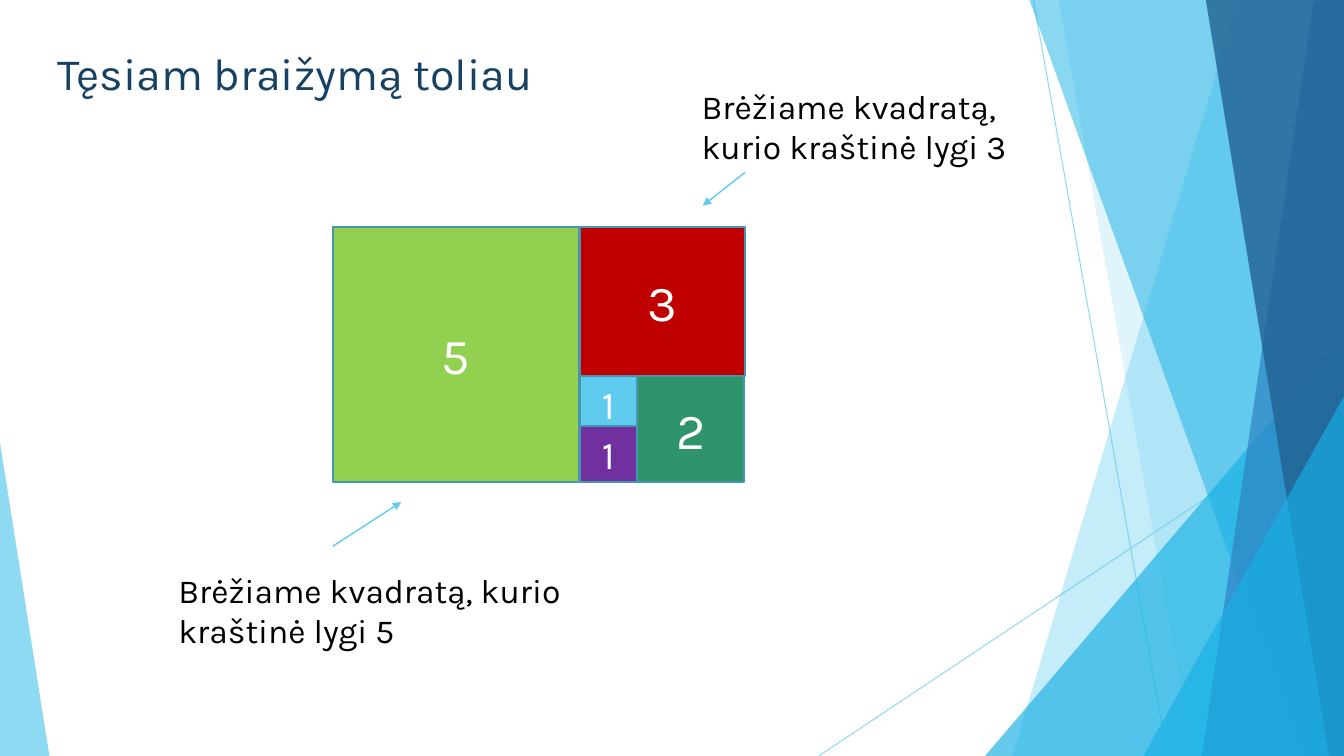
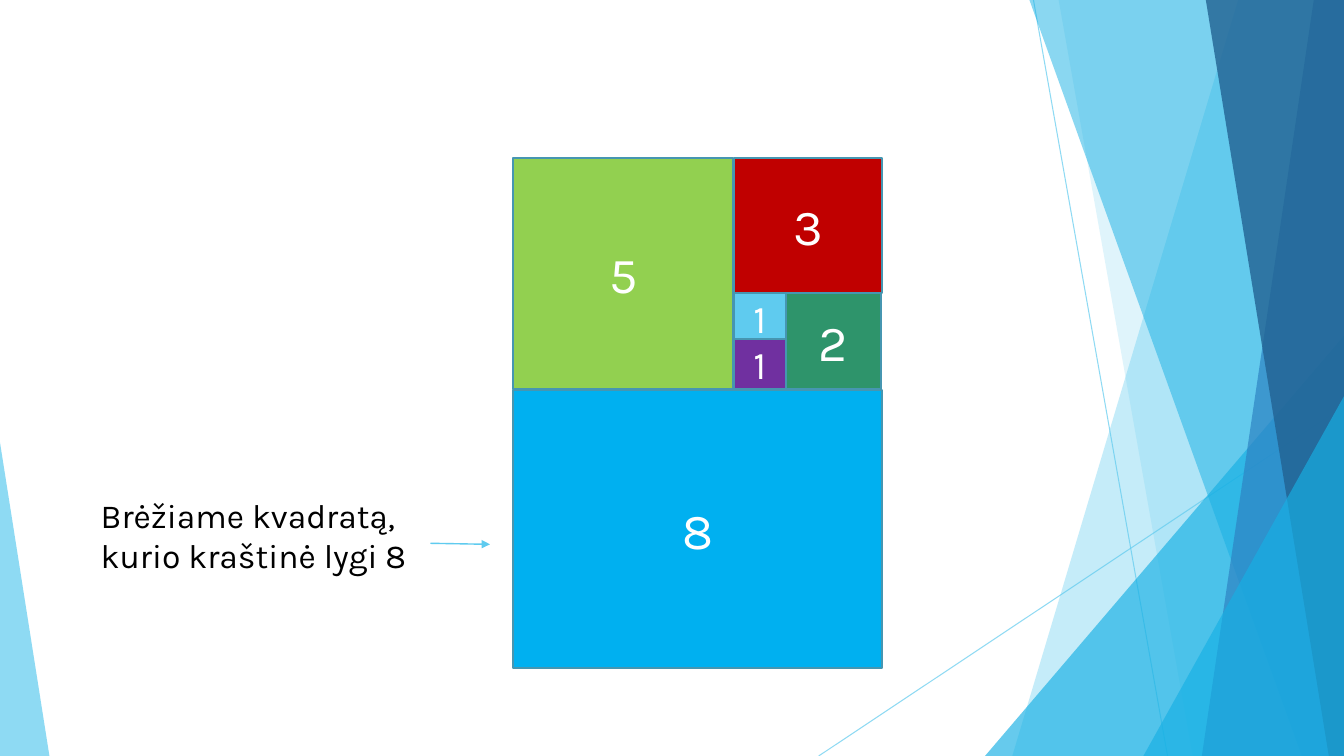
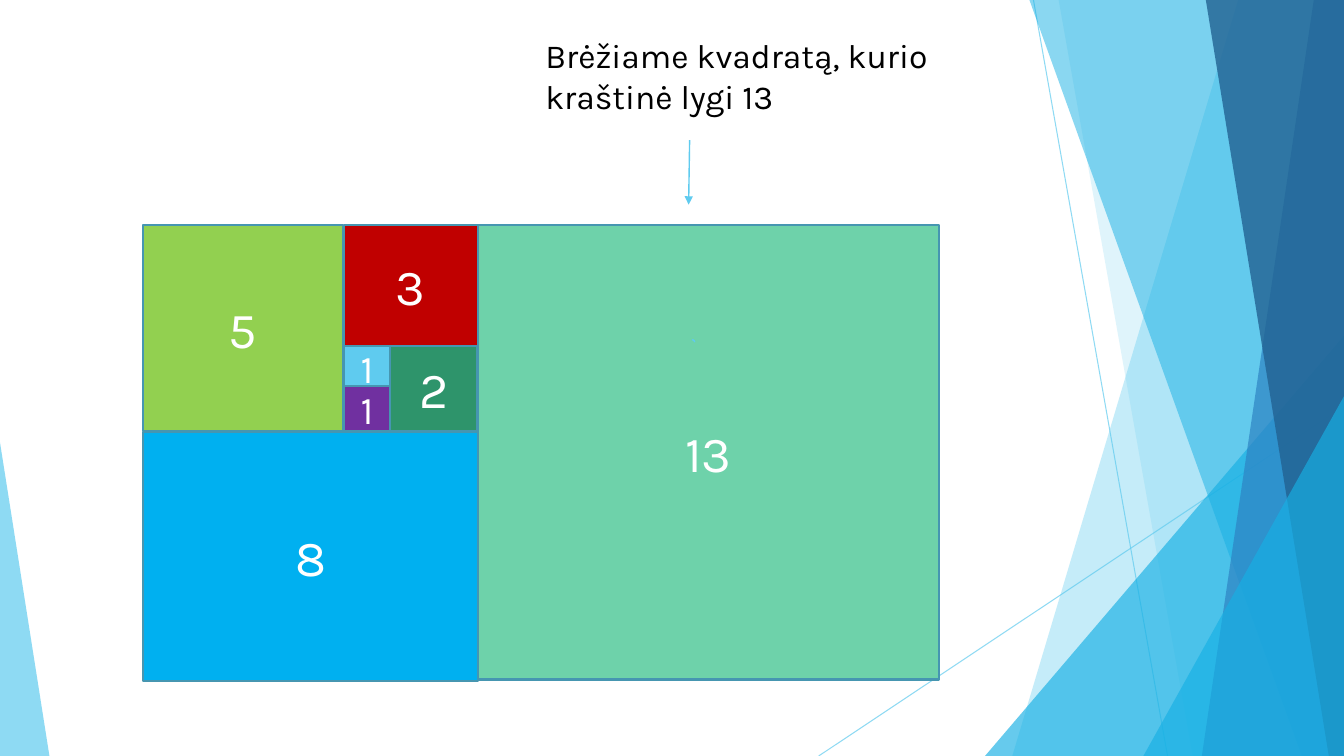
from pptx import Presentation
from pptx.dml.color import RGBColor
from pptx.enum.shapes import MSO_CONNECTOR, MSO_SHAPE as SHAPE
from pptx.enum.text import MSO_ANCHOR as ANCHOR, MSO_AUTO_SIZE as AUTOSIZE, PP_ALIGN as ALIGN
from pptx.oxml.ns import qn
from pptx.util import Pt
from lxml import etree

PX = 9144  # EMU in one px, 100 px to the inch
W, H = 1333, 750
SKY, CYAN, BLUE, NAVY, EDGE = "5FCBEF", "17B0E4", "2E83C3", "226292", "4696B1"
TITLE_ONLY, BLANK = 5, 6

# Text styles
TITLE = dict(size=32, color="174162")
NOTE = dict(size=24, color="000000")
SMALL = dict(size=28, color="FFFFFF")
LARGE = dict(size=36, color="FFFFFF")

# Shared backdrop, back to front
# line: x1, y1, x2, y2; band: top x, bottom x; triangle: x, y, w, h, apex
BACKDROP = [
    ("line", (1025, 0, 1158, H), SKY, 70),
    ("line", (W, 403, 812, H), SKY, 70),
    ("band", (1228, 1004), SKY, 36),
    ("band", (1050, 1183), SKY, 20),
    ("triangle", (977, 333, 356, 417, 1), CYAN, 66),
    ("band", (1021, 1291), CYAN, 50),
    ("band", (1303, 1192), BLUE, 70),
    ("band", (1196, 1318), NAVY, 80),
    ("triangle", (1134, 393, 199, 357, 1), CYAN, 66),
    ("triangle", (0, 439, 49, 311, 0), SKY, 70),
]

# Spiral squares at full scale: number, (x, y, w, h), fill, text style
SQUARES = [
    (1, (245, 148, 57, 55), SKY, SMALL),
    (1, (245, 198, 57, 55), "7030A0", SMALL),
    (2, (302, 148, 106, 105), "2E946B", LARGE),
    (3, (245, 0, 164, 148), "C00000", LARGE),
    (5, (0, 0, 244, 253), "92D050", LARGE),
    (8, (0, 254, 409, 305), "00B0F0", LARGE),
    (13, (409, 0, 563, 557), "6ED2AA", LARGE),
]

NOTE_TEXT = "Brėžiame kvadratą, kurio kraštinė lygi {}"

# notes: number, (x, y, w, h), arrow from and to
SLIDES = [
    dict(title="Tęsiam braižymą toliau", count=5, origin=(330, 225), scale=(1, 1),
         notes=[(3, (686, 80, 337, 91), (739, 171, 697, 204)),
                (5, (167, 560, 411, 91), (330, 542, 398, 498))]),
    dict(count=6, origin=(509, 157), scale=(0.895, 0.905),
         notes=[(8, (90, 486, 337, 91), (427, 539, 486, 540))]),
    dict(count=7, origin=(142, 223), scale=(0.812, 0.81), dot=(684, 337, 5, 5),
         notes=[(13, (531, 30, 400, 91), (684, 139, 683, 203))]),
]


def px(*values):
    return [round(v * PX) for v in values]


def rgb(color):
    return RGBColor.from_string(color)


def fade(sp, percent):
    for c in sp.element.iter(qn("a:srgbClr")):
        etree.SubElement(c, qn("a:alpha"), val=str(percent * 1000))


def write(tf, text, style, align=ALIGN.LEFT):
    p = tf.paragraphs[0]
    p.alignment = align
    r = p.add_run()
    r.text = text
    r.font.color.rgb = rgb(style["color"])
    for name, value in dict(name="Karla", size=Pt(style["size"])).items():
        setattr(r.font, name, value)


def paint(sp, fill=None, line=None, width=1.5):
    sp.shadow.inherit = False
    if fill:
        sp.fill.solid()
        sp.fill.fore_color.rgb = rgb(fill)
    else:
        sp.fill.background()
    if line:
        sp.line.color.rgb = rgb(line)
        sp.line.width = Pt(width)
    else:
        sp.line.fill.background()
    return sp


def add_line(s, ends, color, width, arrow=False):
    sp = s.shapes.add_connector(MSO_CONNECTOR.STRAIGHT, *px(*ends))
    sp.line.color.rgb = rgb(color)
    sp.line.width = Pt(width)
    props = sp.element.spPr
    if arrow:
        etree.SubElement(props.find(qn("a:ln")), qn("a:tailEnd"), type="triangle")
    etree.SubElement(props, qn("a:effectLst"))
    return sp


def add_band(s, top, bottom, color):
    outline = s.shapes.build_freeform(top, 0, scale=PX)
    outline.add_line_segments([(W, 0), (W, H), (bottom, H)], close=True)
    return paint(outline.convert_to_shape(), color)


def add_triangle(s, x, y, w, h, apex, color):
    sp = s.shapes.add_shape(SHAPE.ISOSCELES_TRIANGLE, *px(x, y, w, h))
    sp.adjustments[0] = apex
    return paint(sp, color)


def add_backdrop(s, master):
    """Draw the backdrop on a slide, then move it behind everything on the master."""
    tree = master.shapes.element
    for i, (kind, place, color, opacity) in enumerate(BACKDROP):
        if kind == "line":
            sp = add_line(s, place, color, 0.75)
        elif kind == "band":
            sp = add_band(s, *place, color)
        else:
            sp = add_triangle(s, *place, color)
        fade(sp, opacity)
        tree.insert(2 + i, sp.element)


def add_title(s, text):
    sp = s.shapes.title
    sp.left, sp.top, sp.width, sp.height = px(47, 40, 531, 85)
    tf = sp.text_frame
    for name, value in dict(vertical_anchor=ANCHOR.TOP, auto_size=AUTOSIZE.NONE,
                            word_wrap=True).items():
        setattr(tf, name, value)
    write(tf, text, TITLE)


def add_squares(s, count, origin, scale):
    (x0, y0), (sx, sy) = origin, scale
    for number, (x, y, w, h), fill, style in SQUARES[:count]:
        place = px(x0 + x * sx, y0 + y * sy, w * sx, h * sy)
        sp = paint(s.shapes.add_shape(SHAPE.RECTANGLE, *place), fill, EDGE)
        sp.text_frame.vertical_anchor = ANCHOR.MIDDLE
        write(sp.text_frame, str(number), style, ALIGN.CENTER)


def add_note(s, number, place, arrow):
    tf = s.shapes.add_textbox(*px(*place)).text_frame
    tf.word_wrap = True
    write(tf, NOTE_TEXT.format(number), NOTE)
    add_line(s, arrow, SKY, 1, arrow=True)


def main():
    prs = Presentation()
    prs.slide_width, prs.slide_height = px(W, H)
    for i, page in enumerate(SLIDES):
        layout = prs.slide_layouts[TITLE_ONLY if "title" in page else BLANK]
        s = prs.slides.add_slide(layout)
        if i == 0:
            add_backdrop(s, prs.slide_master)
        if "title" in page:
            add_title(s, page["title"])
        add_squares(s, page["count"], page["origin"], page["scale"])
        for note in page["notes"]:
            add_note(s, *note)
        if "dot" in page:
            paint(s.shapes.add_shape(SHAPE.ARC, *px(*page["dot"])), line=SKY, width=1)
    prs.save("out.pptx")


if __name__ == "__main__":
    main()
